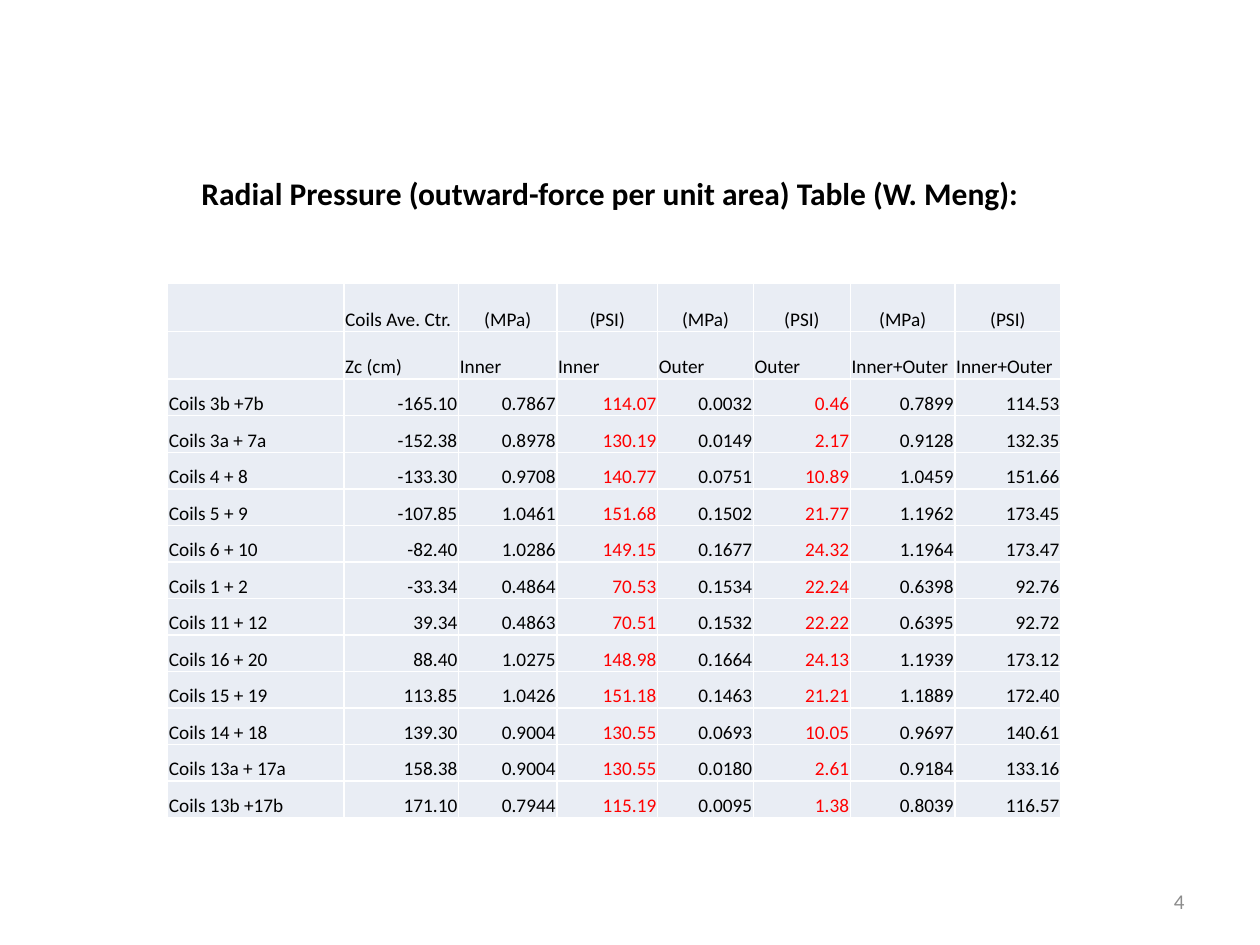
from lxml.etree import SubElement
from pptx import Presentation
from pptx.dml.color import RGBColor
from pptx.enum.text import MSO_ANCHOR, MSO_AUTO_SIZE, PP_ALIGN
from pptx.oxml.ns import qn
from pptx.util import Inches, Pt

BLACK, RED, GRAY, WHITE, PALE = "000000", "FF0000", "8C8C8C", "FFFFFF", "E9EDF4"
LEFT, CENTER, RIGHT = PP_ALIGN.LEFT, PP_ALIGN.CENTER, PP_ALIGN.RIGHT

COLUMN_WIDTHS = [1.4, 0.91, 0.78, 0.8, 0.76, 0.77, 0.83, 0.84]
HEADER_HEIGHT, COIL_HEIGHT = 0.38, 0.29
RED_COLUMNS = (3, 5)

HEADERS = [
    ["", "Coils Ave. Ctr.", "(MPa)", "(PSI)", "(MPa)", "(PSI)", "(MPa)", "(PSI)"],
    ["", "Zc (cm)", "Inner", "Inner", "Outer", "Outer", "Inner+Outer", "Inner+Outer"],
]
COILS = [
    ["Coils 3b +7b", "-165.10", "0.7867", "114.07", "0.0032", "0.46", "0.7899", "114.53"],
    ["Coils 3a + 7a", "-152.38", "0.8978", "130.19", "0.0149", "2.17", "0.9128", "132.35"],
    ["Coils 4 + 8", "-133.30", "0.9708", "140.77", "0.0751", "10.89", "1.0459", "151.66"],
    ["Coils 5 + 9", "-107.85", "1.0461", "151.68", "0.1502", "21.77", "1.1962", "173.45"],
    ["Coils 6 + 10", "-82.40", "1.0286", "149.15", "0.1677", "24.32", "1.1964", "173.47"],
    ["Coils 1 + 2", "-33.34", "0.4864", "70.53", "0.1534", "22.24", "0.6398", "92.76"],
    ["Coils 11 + 12", "39.34", "0.4863", "70.51", "0.1532", "22.22", "0.6395", "92.72"],
    ["Coils 16 + 20", "88.40", "1.0275", "148.98", "0.1664", "24.13", "1.1939", "173.12"],
    ["Coils 15 + 19", "113.85", "1.0426", "151.18", "0.1463", "21.21", "1.1889", "172.40"],
    ["Coils 14 + 18", "139.30", "0.9004", "130.55", "0.0693", "10.05", "0.9697", "140.61"],
    ["Coils 13a + 17a", "158.38", "0.9004", "130.55", "0.0180", "2.61", "0.9184", "133.16"],
    ["Coils 13b +17b", "171.10", "0.7944", "115.19", "0.0095", "1.38", "0.8039", "116.57"],
]


def rgb(color):
    return RGBColor.from_string(color)


def write_text(frame, text, size=11, color=BLACK, bold=False, align=LEFT):
    paragraph = frame.paragraphs[0]
    paragraph.alignment = align
    run = paragraph.add_run()
    run.text = text
    run.font.name = "Calibri"
    run.font.size = Pt(size)
    run.font.bold = bold
    run.font.color.rgb = rgb(color)


def add_label(slide, left, top, width, height, text, wrap=True, **text_format):
    label = slide.shapes.add_textbox(Inches(left), Inches(top), Inches(width), Inches(height))
    frame = label.text_frame
    frame.word_wrap = wrap
    write_text(frame, text, **text_format)
    return frame


def style_cell(cell):
    cell.vertical_anchor = MSO_ANCHOR.BOTTOM
    cell.margin_left = cell.margin_right = cell.margin_top = Inches(0.01)
    cell.margin_bottom = 0
    # Borders precede the fill in the cell properties
    properties = cell._tc.get_or_add_tcPr()
    for side in ("a:lnL", "a:lnR", "a:lnT", "a:lnB"):
        border = SubElement(properties, qn(side), w=str(Pt(1)))
        border_fill = SubElement(border, qn("a:solidFill"))
        SubElement(border_fill, qn("a:srgbClr"), val=WHITE)
    cell.fill.solid()
    cell.fill.fore_color.rgb = rgb(PALE)


def cell_format(row, column):
    """Units are centred, coil values right-aligned, the PSI parts red."""
    if row == 0:
        return {"align": CENTER if column > 1 else LEFT}
    if row < len(HEADERS) or column == 0:
        return {"align": LEFT}
    return {"align": RIGHT, "color": RED if column in RED_COLUMNS else BLACK}


def add_pressure_table(slide, left, top):
    rows = HEADERS + COILS
    heights = [HEADER_HEIGHT] * len(HEADERS) + [COIL_HEIGHT] * len(COILS)
    table = slide.shapes.add_table(
        len(rows), len(COLUMN_WIDTHS), Inches(left), Inches(top),
        Inches(sum(COLUMN_WIDTHS)), Inches(sum(heights))).table
    table.first_row = table.horz_banding = False
    for column, width in zip(table.columns, COLUMN_WIDTHS):
        column.width = Inches(width)
    for r, (values, height) in enumerate(zip(rows, heights)):
        table.rows[r].height = Inches(height)
        for c, value in enumerate(values):
            cell = table.cell(r, c)
            style_cell(cell)
            if value:
                write_text(cell.text_frame, value, **cell_format(r, c))


def main():
    presentation = Presentation()
    presentation.slide_width, presentation.slide_height = Inches(10), Inches(7.5)
    slide = presentation.slides.add_slide(presentation.slide_layouts[6])

    # Pressure table
    add_pressure_table(slide, 1.33, 2.25)

    # Title
    title = add_label(slide, 1.5, 1.33, 6.75, 0.4,
                      "Radial Pressure (outward-force per unit area) Table (W. Meng):",
                      wrap=False, size=18, bold=True)
    title.auto_size = MSO_AUTO_SIZE.SHAPE_TO_FIT_TEXT

    # Slide number
    number = add_label(slide, 7.17, 6.95, 2.33, 0.4, "4", size=12, color=GRAY, align=RIGHT)
    number.vertical_anchor = MSO_ANCHOR.MIDDLE

    presentation.save("out.pptx")


if __name__ == "__main__":
    main()
